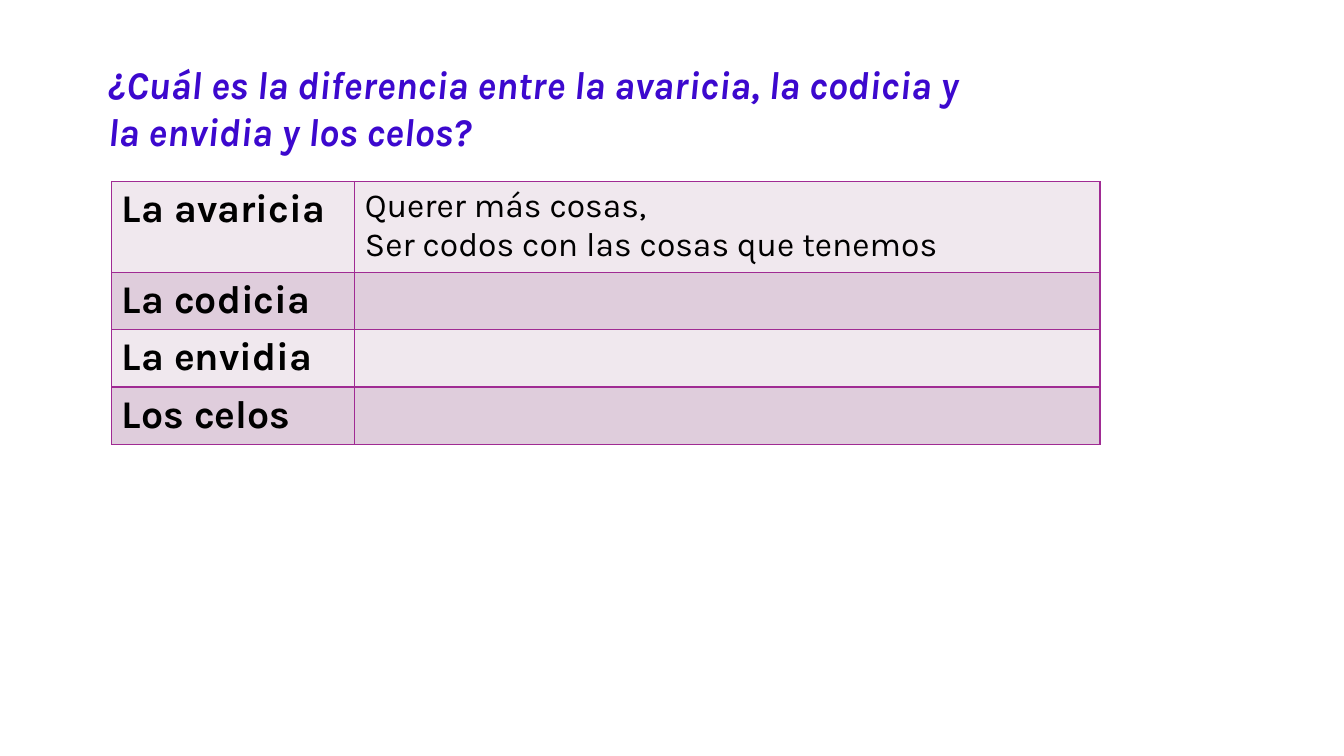
from lxml.etree import SubElement
from pptx import Presentation
from pptx.dml.color import RGBColor
from pptx.enum.text import MSO_ANCHOR, MSO_AUTO_SIZE, PP_ALIGN
from pptx.oxml.ns import qn
from pptx.util import Inches, Pt

# Content
TITLE = "¿Cuál es la diferencia entre la avaricia, la codicia y la envidia y los celos?"
ROWS = [
    ("La avaricia", ["Querer más cosas,", "Ser codos con las cosas que tenemos"]),
    ("La codicia", []),
    ("La envidia", []),
    ("Los celos", []),
]

# Layout in inches, and colours
TITLE_BOX = (0.97, 0.55, 9.03, 1.2)
TABLE_LEFT, TABLE_TOP = 1.11, 1.8
COLUMN_WIDTHS = (2.41, 7.39)
ROW_HEIGHTS = (0.9, 0.57, 0.57, 0.57)
BANDS = ("F0E8EE", "DFCDDC")
BORDER = "A02B93"


def color(code):
    return RGBColor.from_string(code)


def write(frame, lines, size=28, ink="000000", bold=False, italic=False):
    for index, line in enumerate(lines):
        para = frame.add_paragraph() if index else frame.paragraphs[0]
        para.alignment = PP_ALIGN.LEFT
        span = para.add_run()
        span.text = line
        font = span.font
        font.name, font.size = "Karla", Pt(size)
        font.bold, font.italic = bold, italic
        font.color.rgb = color(ink)


def add_borders(cell):
    # Borders come before the fill in the cell properties
    properties = cell._tc.get_or_add_tcPr()
    for position, side in enumerate(("lnL", "lnR", "lnT", "lnB")):
        line = SubElement(properties, qn(f"a:{side}"), w=str(Pt(1)))
        fill = SubElement(line, qn("a:solidFill"))
        SubElement(fill, qn("a:srgbClr"), val=BORDER)
        properties.insert(position, line)


deck = Presentation()
deck.slide_width, deck.slide_height = Inches(13.33), Inches(7.5)
page = deck.slides.add_slide(deck.slide_layouts[5])
page.background.fill.solid()
page.background.fill.fore_color.rgb = color("FFFFFF")

# Title
title = page.shapes.title
title.left, title.top, title.width, title.height = map(Inches, TITLE_BOX)
frame = title.text_frame
frame.word_wrap = True
frame.auto_size = MSO_AUTO_SIZE.NONE
frame.vertical_anchor = MSO_ANCHOR.TOP
write(frame, [TITLE], ink="3C08CE", bold=True, italic=True)

# Table of terms and meanings
table = page.shapes.add_table(
    len(ROWS), len(COLUMN_WIDTHS), Inches(TABLE_LEFT), Inches(TABLE_TOP),
    Inches(sum(COLUMN_WIDTHS)), Inches(sum(ROW_HEIGHTS))).table
table.first_row = table.horz_banding = False
for column, width in zip(table.columns, COLUMN_WIDTHS):
    column.width = Inches(width)
for index, (term, meaning) in enumerate(ROWS):
    row = table.rows[index]
    row.height = Inches(ROW_HEIGHTS[index])
    for cell in row.cells:
        cell.fill.solid()
        cell.fill.fore_color.rgb = color(BANDS[index % 2])
        add_borders(cell)
    write(row.cells[0].text_frame, [term], bold=True)
    write(row.cells[1].text_frame, meaning, size=24)

deck.save("out.pptx")
